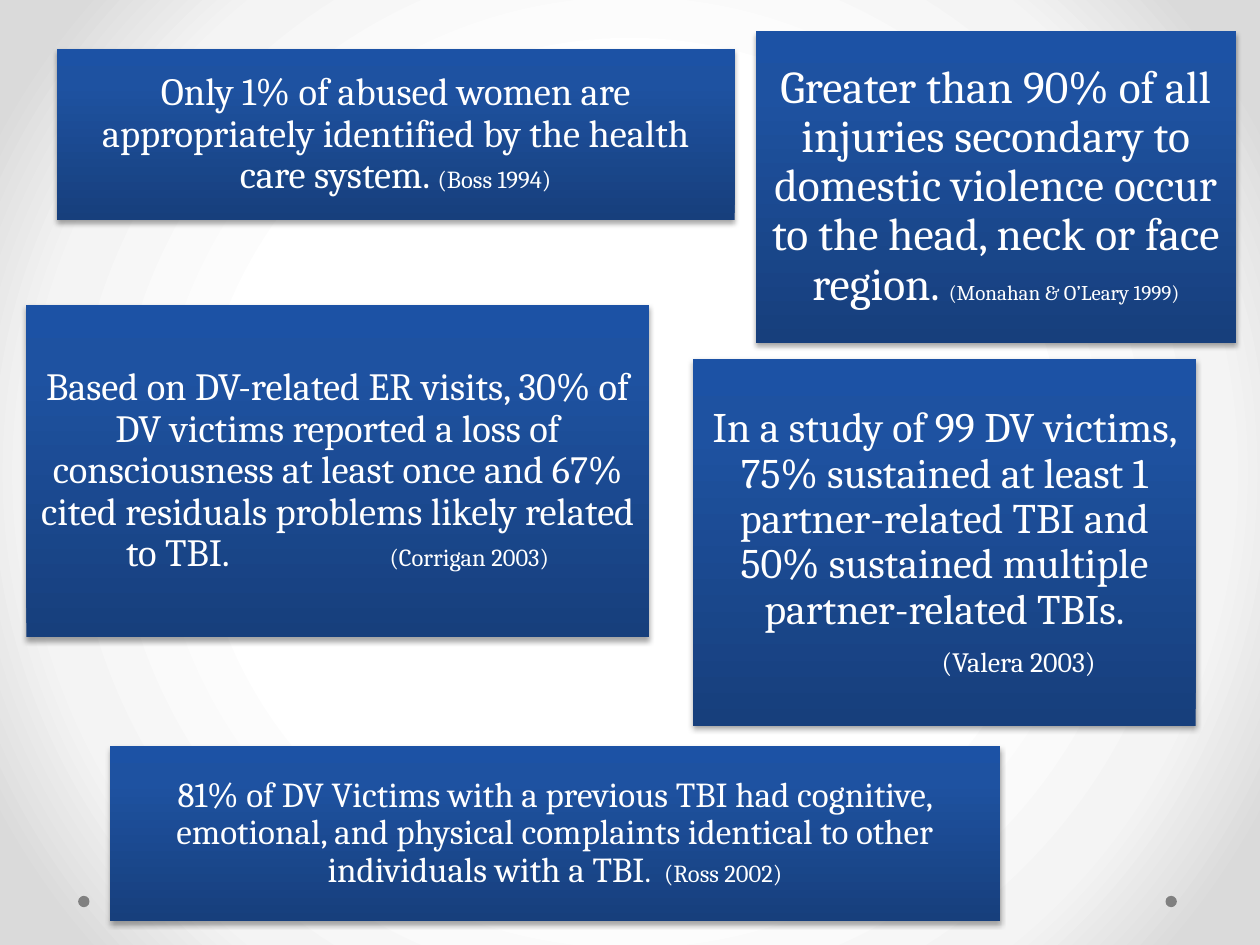
from lxml import etree
from pptx import Presentation
from pptx.dml.color import RGBColor as RGB
from pptx.enum.shapes import MSO_SHAPE as Shape
from pptx.enum.text import MSO_ANCHOR as Anchor, PP_ALIGN as Align
from pptx.oxml.ns import qn
from pptx.util import Inches, Pt

FONT = "Cambria"
WHITE = RGB(0xFF, 0xFF, 0xFF)
GRAY = RGB(0x80, 0x80, 0x80)
BLACK = RGB(0, 0, 0)
BLUES = [(0, RGB(0x17, 0x3F, 0x7C)), (80, RGB(0x1E, 0x52, 0xA1)),
         (100, RGB(0x1C, 0x52, 0xA5))]
GRAYS = [(50, WHITE), (76, RGB(0xF4, 0xF4, 0xF4)), (92, RGB(0xDA, 0xDA, 0xDA))]

DOTS = [9.25, 0.62]
DOT_TOP, DOT_SIZE = 7.11, 0.09

CARDS = [
    ((0.45, 0.39, 5.38, 1.36), 0.08, [[
        ("Only 1% of abused women are appropriately identified by the "
         "health care system. ", 22), ("(Boss 1994)", 14)]]),
    ((6, 0.25, 3.81, 2.47), 0.08, [[
        ("Greater than 90% of all injuries secondary to domestic violence "
         "occur to the head, neck or face region. ", 26),
        ("(Monahan & O’Leary 1999)", 12)]]),
    ((0.21, 2.42, 4.94, 2.64), 0.09, [[
        ("Based on DV-related ER visits, 30% of DV victims reported a loss "
         "of consciousness at least once and 67% cited residuals problems "
         "likely related to TBI.\t", 22), ("(Corrigan 2003)", 14)]]),
    ((5.5, 2.85, 3.99, 2.91), 0.09, [
        [("In a study of 99 DV victims, 75% sustained at least 1 "
          "partner-related TBI and 50% sustained multiple partner-related "
          "TBIs.", 24)],
        [("(Valera 2003)", 16)]]),
    ((0.87, 5.92, 7.07, 1.39), 0.07, [[
        ("81% of DV Victims with a previous TBI had cognitive, emotional, "
         "and physical complaints identical to other individuals with a TBI",
         20), (".  ", 18), ("(Ross 2002)", 14)]]),
]
TAB, INDENT = 2.09, 1.18


def add(node, tag, **attrs):
    kid = etree.SubElement(node, qn(tag))
    for key, val in attrs.items():
        kid.set(key, str(val))
    return kid


def blend(solid, stops, round_=False):
    grad = etree.Element(qn("a:gradFill"))
    row = add(grad, "a:gsLst")
    for pos, hue in stops:
        add(add(row, "a:gs", pos=pos * 1000), "a:srgbClr", val=hue)
    if round_:
        way = add(grad, "a:path", path="circle")
        add(way, "a:fillToRect", l=50000, t=50000, r=50000, b=50000)
    else:
        add(grad, "a:lin", ang=270 * 60000, scaled=0)
    solid.getparent().replace(solid, grad)


def shade(shape):
    glow = add(shape.element.spPr.find(qn("a:effectLst")), "a:outerShdw",
               blurRad=Pt(3.1), dist=Pt(1.8), dir=90 * 60000,
               algn="ctr", rotWithShape=0)
    add(add(glow, "a:srgbClr", val=BLACK), "a:alpha", val=35000)


def draw(slide, kind, box, hue):
    shape = slide.shapes.add_shape(kind, *map(Inches, box))
    shape.shadow.inherit = False
    shape.fill.solid()
    shape.fill.fore_color.rgb = hue
    shape.line.fill.background()
    return shape


def write(frame, inset, paras):
    frame.word_wrap = True
    frame.vertical_anchor = Anchor.MIDDLE
    frame.margin_left = frame.margin_right = Inches(inset)
    frame.margin_top = frame.margin_bottom = Inches(inset)
    for i, parts in enumerate(paras):
        para = frame.add_paragraph() if i else frame.paragraphs[0]
        para.alignment = Align.CENTER
        para.line_spacing = 0.9
        para.space_after = Pt(round(0.35 * parts[0][1], 1))
        props = para._p.get_or_add_pPr()
        if i:
            props.set("marL", str(Inches(INDENT)))
        if "\t" in parts[0][0]:
            add(add(props, "a:tabLst"), "a:tab", pos=Inches(TAB), algn="l")
        for text, size in parts:
            run = para.add_run()
            run.text = text
            run.font.name = FONT
            run.font.size = Pt(size)
            run.font.color.rgb = WHITE


def main():
    deck = Presentation()
    deck.slide_width, deck.slide_height = Inches(10), Inches(7.5)
    slide = deck.slides.add_slide(deck.slide_layouts[6])
    slide.background.fill.solid()
    back = slide.element.find(".//" + qn("p:bgPr"))
    blend(back.find(qn("a:solidFill")), GRAYS, True)
    for left in DOTS:
        draw(slide, Shape.OVAL, (left, DOT_TOP, DOT_SIZE, DOT_SIZE), GRAY)
    for box, inset, paras in CARDS:
        card = draw(slide, Shape.RECTANGLE, box, BLUES[0][1])
        blend(card.element.spPr.find(qn("a:solidFill")), BLUES)
        shade(card)
        write(card.text_frame, inset, paras)
    deck.save("out.pptx")


if __name__ == "__main__":
    main()
